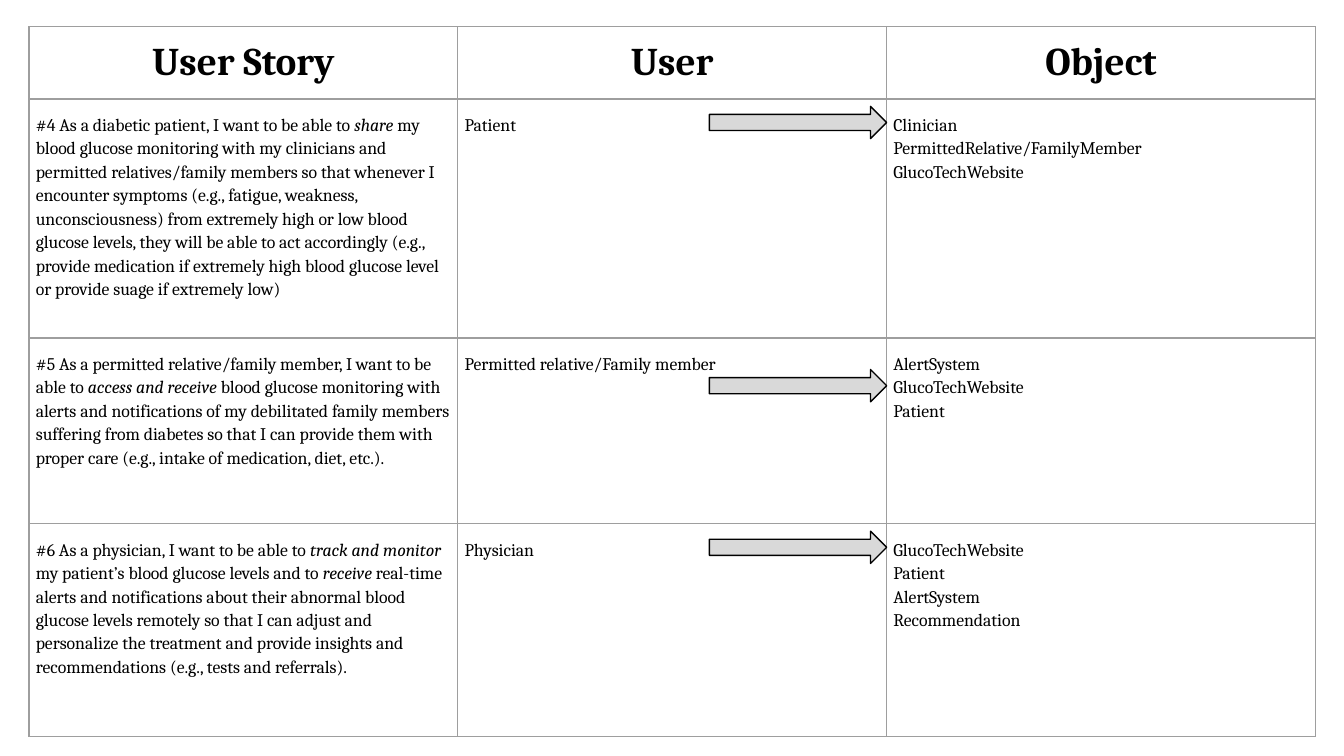
from lxml import etree
from pptx import Presentation
from pptx.dml.color import RGBColor
from pptx.enum import shapes, text
from pptx.oxml import ns
from pptx.util import Pt

COLORS = {"ink": "000000", "paper": "FFFFFF", "grid": "9E9E9E", "arrow": "D9D9D9"}
FONT = "Cambria"
HEADERS = ["User Story", "User", "Object"]
COLUMN_WIDTH = 229.7
ROW_HEIGHTS = [38.6, 128, 99.6, 114]
ARROW_OFFSETS = [4, 17, 4]
ARROW_WIDTH, ARROW_HEIGHT = 95, 17.3

STORIES = [
    (
        [
            ("#4 As a diabetic patient, I want to be able to ", False),
            ("share ", True),
            ("my blood glucose monitoring with my clinicians and permitted "
             "relatives/family members so that whenever I encounter symptoms "
             "(e.g., fatigue, weakness, unconsciousness) from extremely high or low "
             "blood glucose levels, they will be able to act accordingly (e.g., "
             "provide medication if extremely high blood glucose level or provide "
             "suage if extremely low)", False),
        ],
        "Patient",
        ["Clinician", "PermittedRelative/FamilyMember", "GlucoTechWebsite"],
    ),
    (
        [
            ("#5 As a permitted relative/family member, I want to be able to ", False),
            ("access and receive ", True),
            ("blood glucose monitoring with alerts and notifications of my "
             "debilitated family members suffering from diabetes so that I can "
             "provide them with proper care (e.g., intake of medication, diet, "
             "etc.).", False),
        ],
        "Permitted relative/Family member",
        ["AlertSystem", "GlucoTechWebsite", "Patient"],
    ),
    (
        [
            ("#6 As a physician, I want to be able to ", False),
            ("track and monitor ", True),
            ("my patient’s blood glucose levels and to ", False),
            ("receive ", True),
            ("real-time alerts and notifications about their abnormal blood glucose "
             "levels remotely so that I can adjust and personalize the treatment and "
             "provide insights and recommendations (e.g., tests and referrals).", False),
        ],
        "Physician",
        ["GlucoTechWebsite", "Patient", "AlertSystem", "Recommendation"],
    ),
]


def color(name):
    return RGBColor.from_string(COLORS[name])


def add_borders(cell):
    properties = cell._tc.get_or_add_tcPr()
    for position, side in enumerate(("lnL", "lnR", "lnT", "lnB")):
        line = etree.Element(ns.qn(f"a:{side}"), w=str(Pt(0.75)))
        fill = etree.SubElement(line, ns.qn("a:solidFill"))
        etree.SubElement(fill, ns.qn("a:srgbClr"), val=COLORS["grid"])
        properties.insert(position, line)


def fill_cell(cell, paragraphs, header=False):
    cell.fill.solid()
    cell.fill.fore_color.rgb = color("paper")
    add_borders(cell)
    cell.margin_left = cell.margin_right = Pt(7.2 if header else 3.6)
    cell.margin_top = cell.margin_bottom = Pt(7.2)
    cell.vertical_anchor = text.MSO_ANCHOR.TOP
    frame = cell.text_frame
    for index, spans in enumerate(paragraphs):
        para = frame.add_paragraph() if index else frame.paragraphs[0]
        para.alignment = text.PP_ALIGN.CENTER if header else text.PP_ALIGN.LEFT
        para.line_spacing = 1.0 if header else 1.15
        for words, italic in spans:
            span = para.add_run()
            span.text = words
            span.font.name = FONT
            span.font.size = Pt(21 if header else 9.5)
            span.font.bold = header
            span.font.italic = italic
            span.font.color.rgb = color("ink")


def add_story_table(page, left, top):
    frame = page.shapes.add_table(
        len(ROW_HEIGHTS), len(HEADERS), Pt(left), Pt(top),
        Pt(COLUMN_WIDTH * len(HEADERS)), Pt(sum(ROW_HEIGHTS)))
    table = frame.table
    table.horz_banding = False
    for column in table.columns:
        column.width = Pt(COLUMN_WIDTH)
    for row, height in zip(table.rows, ROW_HEIGHTS):
        row.height = Pt(height)
    for index, title in enumerate(HEADERS):
        fill_cell(table.cell(0, index), [[(title, False)]], header=True)
    for index, (story, user, objects) in enumerate(STORIES, 1):
        fill_cell(table.cell(index, 0), [story])
        fill_cell(table.cell(index, 1), [[(user, False)]])
        fill_cell(table.cell(index, 2), [[(name, False)] for name in objects])


def add_arrows(page, left, top):
    object_left = left + 2 * COLUMN_WIDTH
    for index, offset in enumerate(ARROW_OFFSETS, 1):
        row_top = top + sum(ROW_HEIGHTS[:index])
        arrow = page.shapes.add_shape(
            shapes.MSO_SHAPE.RIGHT_ARROW, Pt(object_left - ARROW_WIDTH),
            Pt(row_top + offset), Pt(ARROW_WIDTH), Pt(ARROW_HEIGHT))
        arrow.shadow.inherit = False
        arrow.fill.solid()
        arrow.fill.fore_color.rgb = color("arrow")
        arrow.line.color.rgb = color("ink")
        arrow.line.width = Pt(0.75)


def main():
    deck = Presentation()
    deck.slide_width, deck.slide_height = Pt(720), Pt(405)
    page = deck.slides.add_slide(deck.slide_layouts[6])
    left, top = 15.6, 14.4
    add_story_table(page, left, top)
    add_arrows(page, left, top)
    deck.save("out.pptx")


if __name__ == "__main__":
    main()
